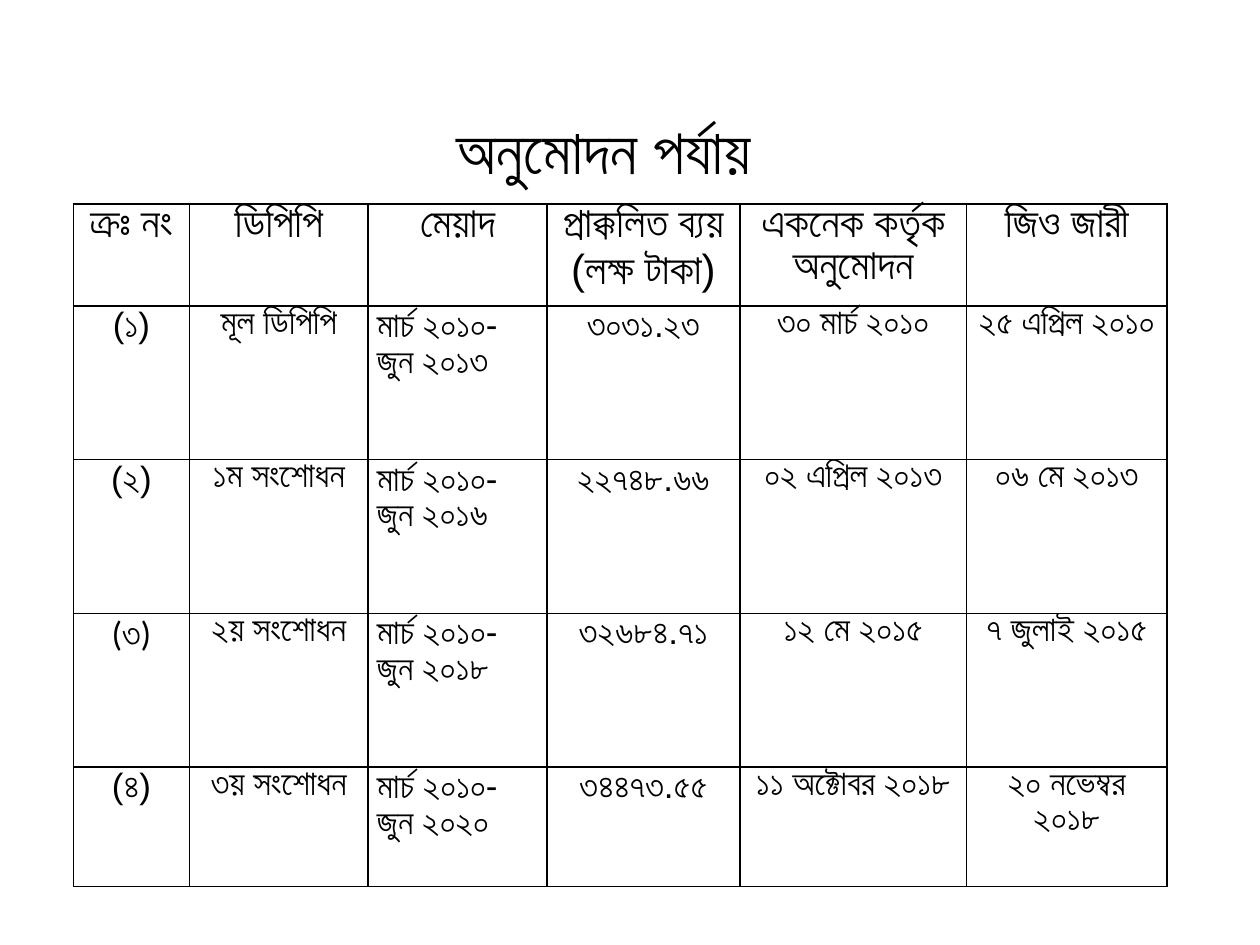
from pptx import Presentation
from pptx.dml.color import RGBColor
from pptx.enum.text import MSO_ANCHOR, MSO_AUTO_SIZE, PP_ALIGN
from pptx.oxml import parse_xml
from pptx.oxml.ns import nsdecls
from pptx.util import Pt

BLACK = RGBColor(0, 0, 0)
COLUMN_WIDTHS = [66.2, 102.2, 102.2, 110.2, 129.6, 114.5]
ROW_HEIGHTS = [58.3, 87.8, 87.8, 87.8, 68.4]
PERIOD_COLUMN = 2
HEADER = ["ক্রঃ নং", "ডিপিপি", "মেয়াদ", "প্রাক্কলিত ব্যয় (লক্ষ টাকা)",
          "একনেক কর্তৃক অনুমোদন", "জিও জারী"]
APPROVALS = [
    ["(১)", "মূল ডিপিপি", "মার্চ ২০১০-\nজুন ২০১৩", "৩০৩১.২৩",
     "৩০ মার্চ ২০১০", "২৫ এপ্রিল ২০১০"],
    ["(২)", "১ম সংশোধন", "মার্চ ২০১০-\nজুন ২০১৬", "২২৭৪৮.৬৬",
     "০২ এপ্রিল ২০১৩", "০৬ মে ২০১৩"],
    ["(৩)", "২য় সংশোধন", "মার্চ ২০১০- জুন ২০১৮", "৩২৬৮৪.৭১",
     "১২ মে ২০১৫", "৭ জুলাই ২০১৫"],
    ["(৪)", "৩য় সংশোধন", "মার্চ ২০১০- জুন ২০২০", "৩৪৪৭৩.৫৫",
     "১১ অক্টোবর ২০১৮", "২০ নভেম্বর ২০১৮"],
]


def write_text(text_frame, text, size, font="Arial", align=PP_ALIGN.CENTER):
    text_frame.text = text
    for paragraph in text_frame.paragraphs:
        paragraph.alignment = align
        for run in paragraph.runs:
            run.font.size = Pt(size)
            run.font.name = font
            run.font.color.rgb = BLACK


def add_title(slide, text):
    shape = slide.shapes.add_textbox(Pt(186), Pt(60), Pt(318), Pt(51))
    text_frame = shape.text_frame
    text_frame.word_wrap = True
    text_frame.auto_size = MSO_AUTO_SIZE.SHAPE_TO_FIT_TEXT
    text_frame.vertical_anchor = MSO_ANCHOR.MIDDLE
    write_text(text_frame, text, size=36)


def format_cell(cell):
    cell.margin_left = cell.margin_right = Pt(5)
    cell.margin_top = cell.margin_bottom = Pt(0)
    properties = cell._tc.get_or_add_tcPr()
    for side in "LRTB":
        properties.append(parse_xml(
            f'<a:ln{side} {nsdecls("a")} w="{Pt(1)}"><a:solidFill>'
            f'<a:srgbClr val="{BLACK}"/></a:solidFill></a:ln{side}>'))
    cell.fill.background()


def add_approval_table(slide):
    rows = [HEADER] + APPROVALS
    frame = slide.shapes.add_table(
        len(rows), len(HEADER), Pt(42), Pt(116.6),
        Pt(sum(COLUMN_WIDTHS)), Pt(sum(ROW_HEIGHTS)))
    table = frame.table
    table.first_row = table.horz_banding = False
    for column, width in zip(table.columns, COLUMN_WIDTHS):
        column.width = Pt(width)
    for row, height in zip(table.rows, ROW_HEIGHTS):
        row.height = Pt(height)
    for row_index, texts in enumerate(rows):
        for column_index, text in enumerate(texts):
            cell = table.cell(row_index, column_index)
            format_cell(cell)
            is_period = row_index > 0 and column_index == PERIOD_COLUMN
            write_text(cell.text_frame, text,
                       size=20 if row_index else 24,
                       font="Calibri" if text == "(৩)" else "Arial",
                       align=PP_ALIGN.LEFT if is_period else PP_ALIGN.CENTER)


def main():
    presentation = Presentation()
    presentation.slide_width = Pt(720)
    presentation.slide_height = Pt(540)
    slide = presentation.slides.add_slide(presentation.slide_layouts[6])
    add_title(slide, "অনুমোদন পর্যায়")
    add_approval_table(slide)
    presentation.save("out.pptx")


if __name__ == "__main__":
    main()
